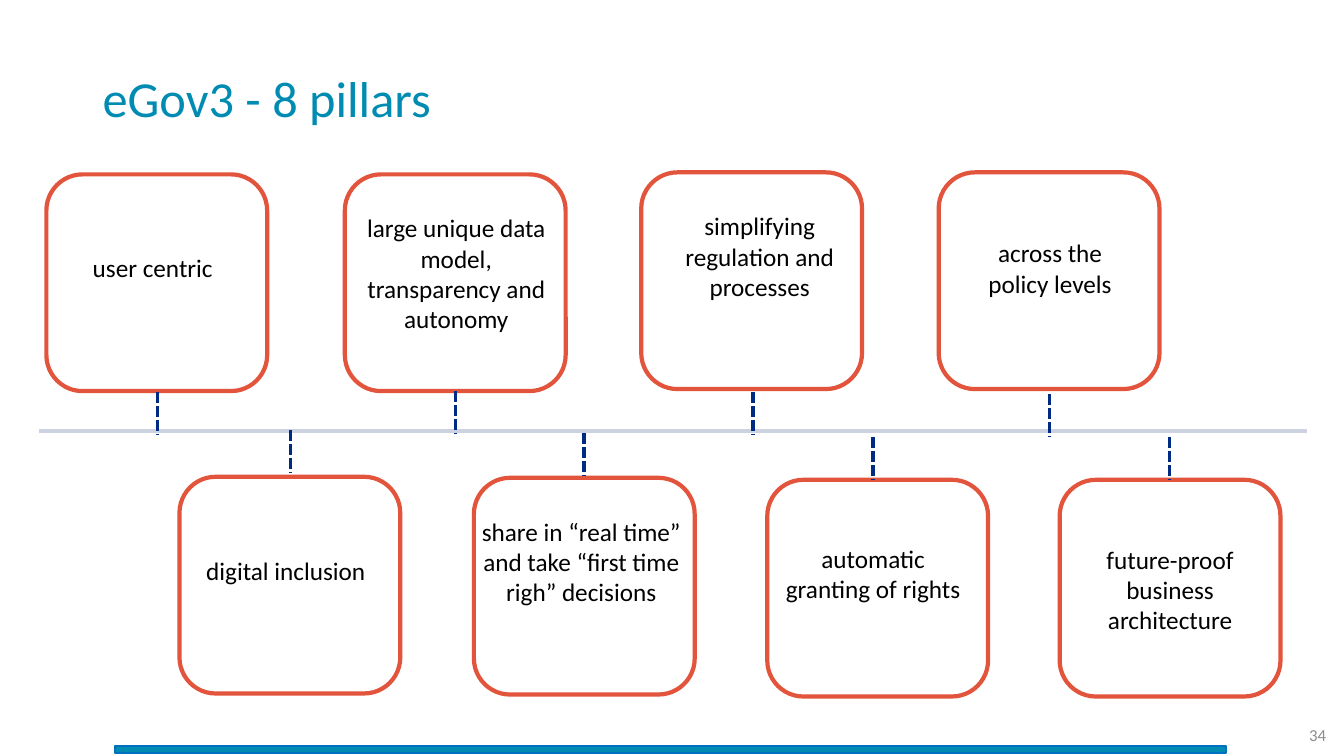
from dataclasses import dataclass

from lxml import etree
from pptx import Presentation
from pptx.dml.color import RGBColor
from pptx.enum.dml import MSO_LINE
from pptx.enum.shapes import MSO_CONNECTOR, MSO_SHAPE
from pptx.enum.text import MSO_ANCHOR, PP_ALIGN
from pptx.oxml.ns import qn
from pptx.util import Emu, Pt

RECT, ROUND = MSO_SHAPE.RECTANGLE, MSO_SHAPE.ROUNDED_RECTANGLE
STRAIGHT, DASH = MSO_CONNECTOR.STRAIGHT, MSO_LINE.SQUARE_DOT
TOP, MIDDLE = MSO_ANCHOR.TOP, MSO_ANCHOR.MIDDLE
LEFT, CENTER, RIGHT = PP_ALIGN.LEFT, PP_ALIGN.CENTER, PP_ALIGN.RIGHT
SCALE = 9144  # 100 px to the inch
CARD_W, CARD_H, STEM_H = 219, 215, 42


@dataclass(frozen=True)
class Theme:
    font: str = "Calibri"
    title: int = 36
    body: int = 18
    small: int = 12
    teal: str = "008CB2"
    blue: str = "0070C0"
    navy: str = "002060"
    stem: str = "002B82"
    red: str = "E2543C"
    black: str = "000000"
    white: str = "FFFFFF"
    grey: str = "8C8C8C"


THEME = Theme()

# words, card (x, y), text (x, y, w, h), stem (x, y)
PILLARS = [
    ("user centric", (46, 173), (60, 245, 183, 71), (156, 389)),
    ("digital inclusion", (178, 473), (192, 546, 183, 40), (288, 427)),
    ("large unique data model, transparency and autonomy",
     (342, 173), (343, 206, 219, 131), (452, 388)),
    ("share in “real time” and take “first time righ” decisions",
     (470, 474), (467, 507, 219, 131), (579, 430)),
    ("simplifying regulation and processes",
     (636, 171), (655, 204, 197, 131), (747, 389)),
    ("automatic granting of rights",
     (761, 476), (761, 534, 210, 101), (866, 434)),
    ("across the policy levels",
     (931, 171), (950, 231, 183, 101), (1041, 391)),
    ("future-proof business architecture",
     (1051, 476), (1051, 535, 219, 101), (1160, 434)),
]


def px(*sizes):
    return [Emu(size * SCALE) for size in sizes]


def rgb(code):
    return RGBColor.from_string(code)


def add_box(slide, kind, frame, fill, line, width):
    box = slide.shapes.add_shape(kind, *px(*frame))
    box.shadow.inherit = False
    box.fill.solid()
    box.fill.fore_color.rgb = rgb(fill)
    box.line.color.rgb = rgb(line)
    box.line.width = Pt(width)
    return box


def fade(box, percent):
    """Set the opacity of a solid fill."""
    color = box.fill._xPr.find(qn("a:solidFill"))[0]
    etree.SubElement(color, qn("a:alpha"), val=str(percent * 1000))


def add_text(slide, words, frame, size, color, align=CENTER, anchor=TOP):
    text = slide.shapes.add_textbox(*px(*frame)).text_frame
    text.word_wrap = True
    text.vertical_anchor = anchor
    para = text.paragraphs[0]
    para.text = words
    para.alignment = align
    para.font.name = THEME.font
    para.font.size = Pt(size)
    para.font.color.rgb = rgb(color)
    return para


def add_stem(slide, x, y):
    stem = slide.shapes.add_connector(STRAIGHT, *px(x, y, x, y + STEM_H))
    stem.line.color.rgb = rgb(THEME.stem)
    stem.line.width = Pt(2.5)
    stem.line.dash_style = DASH
    etree.SubElement(stem._element.spPr, qn("a:effectLst"))


def add_pillar(slide, words, card, text, stem):
    add_box(slide, ROUND, (*card, CARD_W, CARD_H), THEME.white, THEME.red, 3)
    add_text(slide, words, text, THEME.body, THEME.black)
    add_stem(slide, *stem)


def main():
    deck = Presentation()
    deck.slide_width, deck.slide_height = px(1333, 750)
    slide = deck.slides.add_slide(deck.slide_layouts[6])

    add_text(slide, "34", (1243, 709, 82, 40), THEME.small, THEME.grey,
             RIGHT, MIDDLE)
    add_box(slide, RECT, (114, 740, 1102, 7), THEME.teal, THEME.blue, 1)
    title = add_text(slide, "eGov3 - 8 pillars", (92, 28, 1150, 145),
                     THEME.title, THEME.teal, LEFT, MIDDLE)
    title.line_spacing = 0.9

    axis = add_box(slide, RECT, (38, 425, 1259, 5), THEME.navy, THEME.white, 1)
    fade(axis, 20)
    for pillar in PILLARS:
        add_pillar(slide, *pillar)
    deck.save("out.pptx")


if __name__ == "__main__":
    main()
